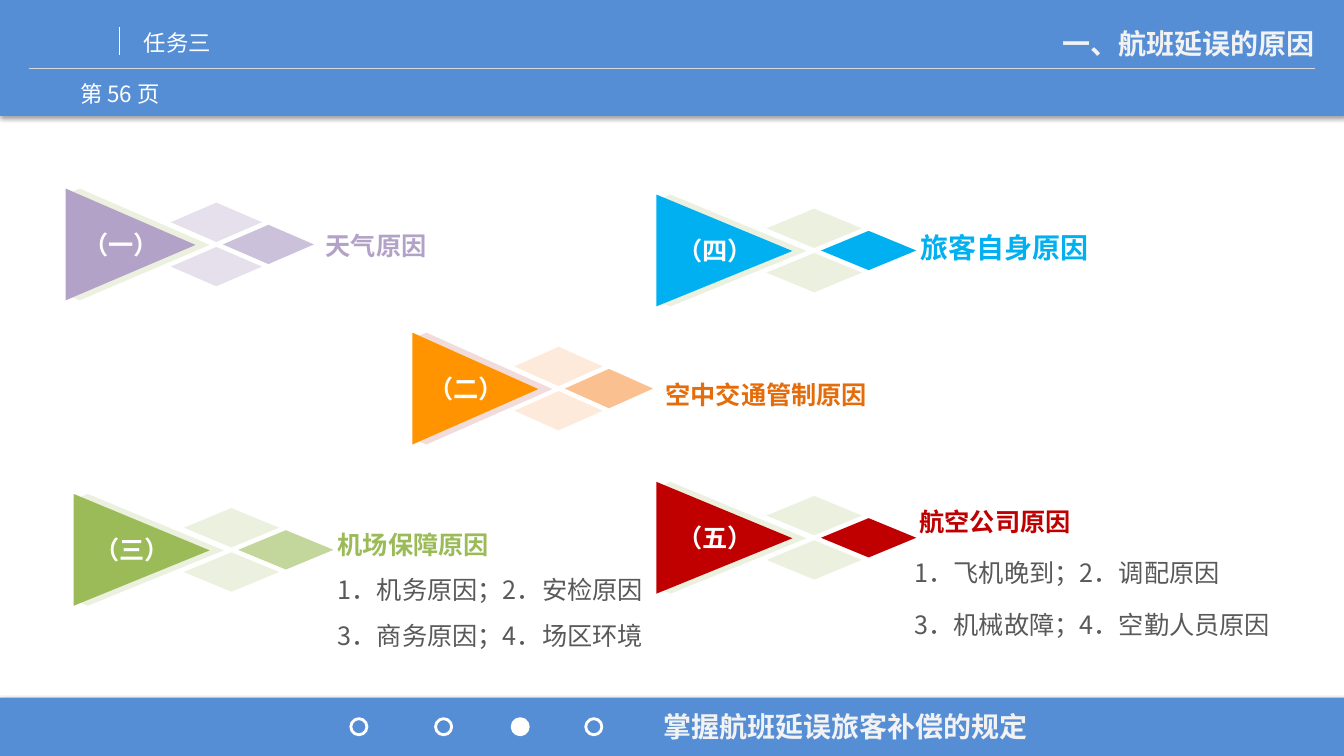
"""Build the slide on the five causes of flight delay."""
from lxml import etree
from pptx import Presentation
from pptx.dml.color import RGBColor
from pptx.enum.shapes import MSO_CONNECTOR, MSO_SHAPE
from pptx.enum.text import MSO_ANCHOR, MSO_AUTO_SIZE, PP_ALIGN
from pptx.oxml.ns import qn
from pptx.util import Inches, Pt

LEFT, CENTER, RIGHT = PP_ALIGN.LEFT, PP_ALIGN.CENTER, PP_ALIGN.RIGHT
TOP, MIDDLE, BOTTOM = MSO_ANCHOR.TOP, MSO_ANCHOR.MIDDLE, MSO_ANCHOR.BOTTOM
RECTANGLE, OVAL, DIAMOND = MSO_SHAPE.RECTANGLE, MSO_SHAPE.OVAL, MSO_SHAPE.DIAMOND
FONT = "Noto Sans CJK SC"
BLUE = RGBColor(0x55, 0x8E, 0xD5)
WHITE = RGBColor(0xFF, 0xFF, 0xFF)
OFF_WHITE = RGBColor(0xF2, 0xF2, 0xF2)
SILVER = RGBColor(0xD9, 0xD9, 0xD9)
GREY = RGBColor(0x59, 0x59, 0x59)
BLACK = RGBColor(0x00, 0x00, 0x00)
PURPLE = RGBColor(0xB3, 0xA2, 0xC7)
MID_PURPLE = RGBColor(0xCC, 0xC1, 0xDA)
PALE_PURPLE = RGBColor(0xE6, 0xE0, 0xEC)
ORANGE = RGBColor(0xFF, 0x93, 0x00)
DARK_ORANGE = RGBColor(0xE4, 0x6C, 0x0A)
MID_ORANGE = RGBColor(0xFA, 0xC0, 0x90)
PALE_ORANGE = RGBColor(0xFD, 0xEA, 0xDA)
PALE_PINK = RGBColor(0xF2, 0xDC, 0xDB)
GREEN = RGBColor(0x9B, 0xBB, 0x59)
MID_GREEN = RGBColor(0xC3, 0xD6, 0x9B)
PALE_GREEN = RGBColor(0xEB, 0xF1, 0xDE)
CYAN = RGBColor(0x00, 0xB0, 0xF0)
RED = RGBColor(0xC0, 0x00, 0x00)
TEXT_INSETS = (0.1, 0.05, 0.1, 0.05)
LABEL_INSETS = (0.12, 0.06, 0.12, 0.06)


def write(box, lines, align=LEFT, anchor=TOP, insets=TEXT_INSETS, spacing=1.0):
    """Fill a box with (text, size, colour, bold, indent) lines."""
    frame = box.text_frame
    left, top, right, bottom = map(Inches, insets)
    frame_format = {
        "word_wrap": True, "auto_size": MSO_AUTO_SIZE.NONE, "vertical_anchor": anchor,
        "margin_left": left, "margin_top": top, "margin_right": right, "margin_bottom": bottom,
    }
    for name, value in frame_format.items():
        setattr(frame, name, value)
    for index, (text, size, colour, bold, indent) in enumerate(lines):
        para = frame.add_paragraph() if index else frame.paragraphs[0]
        para_format = {"alignment": align, "line_spacing": spacing,
                       "space_before": Pt(0), "space_after": Pt(0)}
        for name, value in para_format.items():
            setattr(para, name, value)
        properties = para._p.get_or_add_pPr()
        properties.set("marL", str(Inches(indent)))
        properties.set("indent", "0")
        etree.SubElement(properties, qn("a:buNone"))
        span = para.add_run()
        span.text = text
        for name, value in {"size": Pt(size), "bold": bold, "name": FONT}.items():
            setattr(span.font, name, value)
        span.font.color.rgb = colour
        etree.SubElement(span._r.get_or_add_rPr(), qn("a:ea"), typeface=FONT)


def paint(shape, fill=None, line=None):
    """Set a shape's fill and outline and clear its shadow."""
    shape.shadow.inherit = False
    if fill is None:
        shape.fill.background()
    else:
        shape.fill.solid()
        shape.fill.fore_color.rgb = fill
    if line is None:
        shape.line.fill.background()
    else:
        shape.line.color.rgb = line
        shape.line.width = Pt(2)


deck = Presentation()
deck.slide_width, deck.slide_height = Inches(13.33), Inches(7.5)
page = deck.slides.add_slide(deck.slide_layouts[3])
shapes = page.shapes
title, airport_list, airline_list = page.placeholders

for top, height in ((0, 1.15), (6.92, 0.58)):
    band = shapes.add_shape(RECTANGLE, 0, Inches(top), deck.slide_width, Inches(height))
    paint(band, BLUE)
    effects = band.element.spPr.find(qn("a:effectLst"))
    shadow = etree.SubElement(effects, qn("a:outerShdw"), blurRad=str(Pt(3.1)),
                              dist=str(Pt(1.8)), dir="5400000", rotWithShape="0")
    shade = etree.SubElement(shadow, qn("a:srgbClr"), val=str(BLACK))
    etree.SubElement(shade, qn("a:alpha"), val="35000")

for ends, colour in (((0.29, 0.68, 13.04, 0.68), SILVER), ((1.19, 0.27, 1.19, 0.55), WHITE)):
    rule = shapes.add_connector(MSO_CONNECTOR.STRAIGHT, *map(Inches, ends))
    rule.line.color.rgb = colour
    rule.line.width = Pt(0.75)
    etree.SubElement(rule.element.spPr, qn("a:effectLst"))

banner_texts = [
    ("第 56 页", (0.59, 0.75, 1.2, 0.4), 16, WHITE, False, CENTER),
    ("任务三", (1.33, 0.24, 3.26, 0.37), 16, WHITE, False, LEFT),
    ("掌握航班延误旅客补偿的规定", (6.48, 6.99, 3.94, 0.44), 20, OFF_WHITE, True, LEFT),
]
for text, place, size, colour, bold, align in banner_texts:
    box = shapes.add_textbox(*map(Inches, place))
    write(box, [(text, size, colour, bold, 0)], align)

title.left, title.top, title.width, title.height = map(Inches, (8.09, 0.21, 5.05, 0.44))
write(title, [("一、航班延误的原因", 20, OFF_WHITE, True, 0)], RIGHT)
shapes.element.append(title.element)

for left, fill in ((3.48, None), (4.32, None), (5.08, WHITE), (5.81, None)):
    dot = shapes.add_shape(OVAL, *map(Inches, (left, 7.13, 0.16, 0.16)))
    paint(dot, fill, WHITE)

causes = [
    ("（一）", 0.65, 1.87, 1.29, PURPLE, PALE_GREEN, PALE_PURPLE, MID_PURPLE,
     None, (3.11, 2.05, 3.65, 0.59), 1.0, [("天气原因", 18, PURPLE, True, 0)]),
    ("（二）", 4.09, 3.3, 1.25, ORANGE, PALE_PINK, PALE_ORANGE, MID_ORANGE,
     None, (6.48, 3.53, 2.61, 0.59), 1.0, [("空中交通管制原因", 18, DARK_ORANGE, True, 0)]),
    ("（三）", 0.73, 4.9, 1.35, GREEN, PALE_GREEN, PALE_GREEN, MID_GREEN,
     airport_list, (3.23, 4.77, 3.36, 1.74), 1.5,
     [("机场保障原因", 18, GREEN, True, 0),
      ("1．机务原因；2．安检原因", 18, GREY, False, 0),
      ("3．商务原因；4．场区环境", 18, GREY, False, 0)]),
    ("（四）", 6.51, 1.93, 1.35, CYAN, PALE_GREEN, PALE_GREEN, CYAN,
     None, (8.95, 2.09, 2.72, 0.59), 1.0, [("旅客自身原因", 20, CYAN, True, 0.06)]),
    ("（五）", 6.51, 4.78, 1.35, RED, PALE_GREEN, PALE_GREEN, RED,
     airline_list, (8.95, 4.7, 3.92, 1.7), 1.7,
     [("航空公司原因", 18, RED, True, 0.05),
      ("1．飞机晚到；2．调配原因", 18, GREY, False, 0),
      ("3．机械故障；4．空勤人员原因", 18, GREY, False, 0)]),
]
for (number, left, top, width, main, edge, pale, accent,
     label, place, spacing, lines) in causes:
    for across, down, fill in ((0.81, 0.14, pale), (0.81, 0.58, pale), (1.21, 0.36, accent)):
        diamond = shapes.add_shape(DIAMOND, *map(Inches, (
            left + across * width, top + down, 0.7 * width, 0.39)))
        paint(diamond, fill)
    tip, middle, bottom = left + width, top + 0.56, top + 1.11
    edge_points = [(left + 0.14, top), (tip + 0.14, middle), (left + 0.14, bottom),
                   (left + 0.07, bottom - 0.03), (tip, middle), (left + 0.07, top + 0.03)]
    arrow_points = [(left, top), (tip, middle), (left, bottom)]
    for points, fill in ((edge_points, edge), (arrow_points, main)):
        corners = [(Inches(x), Inches(y)) for x, y in points]
        outline = shapes.build_freeform(*corners[0])
        outline.add_line_segments(corners[1:], close=True)
        arrow = outline.convert_to_shape()
        paint(arrow, fill)
    write(arrow, [(number, 18, WHITE, True, 0)], CENTER, MIDDLE, (0, 0, 0.19, 0))
    if label is None:
        label = shapes.add_textbox(0, 0, 0, 0)
    label.left, label.top, label.width, label.height = map(Inches, place)
    write(label, lines, LEFT, BOTTOM, LABEL_INSETS, spacing)
    shapes.element.append(label.element)

deck.save("out.pptx")
